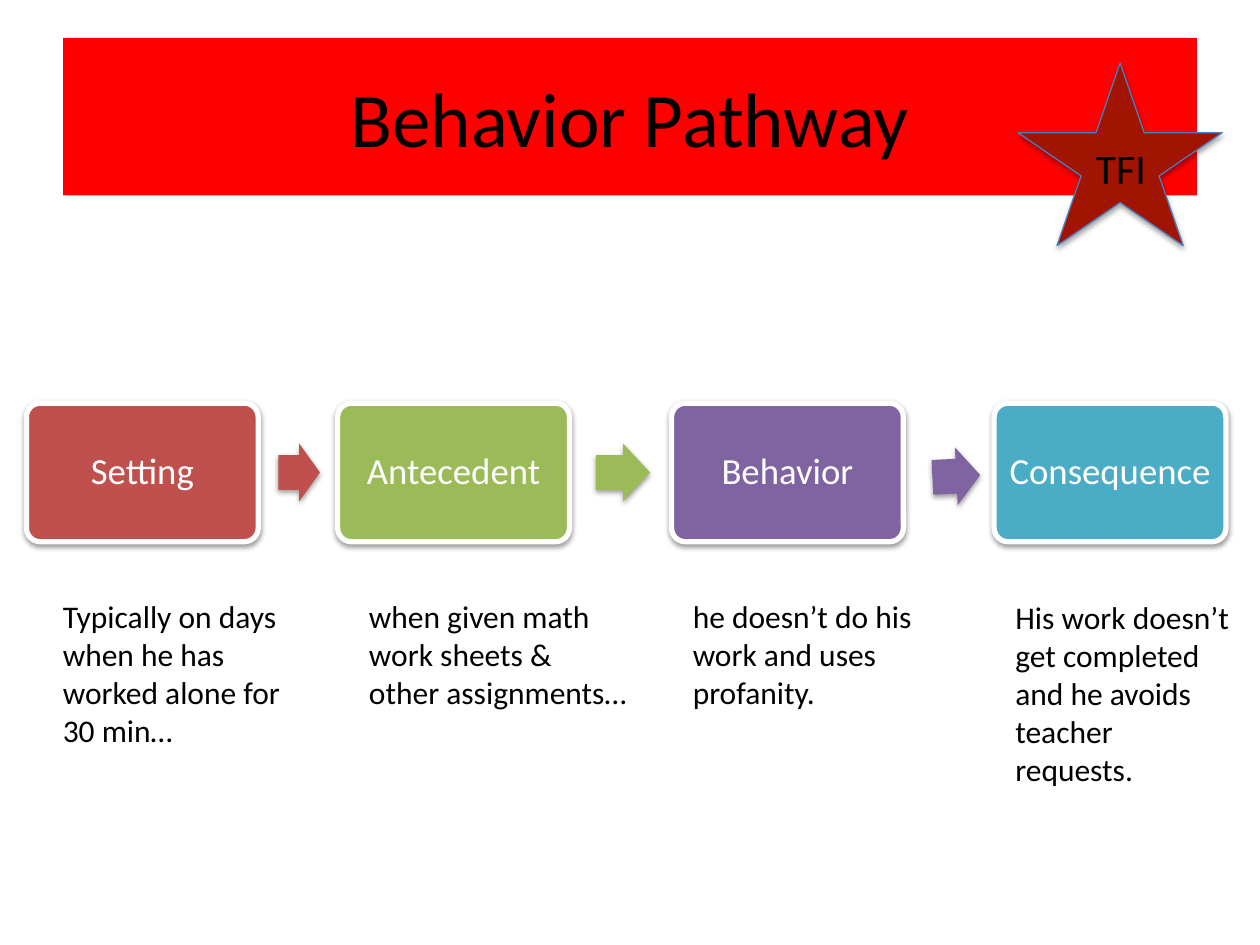
from lxml import etree
from pptx import Presentation
from pptx import util as u
from pptx.dml.color import RGBColor
from pptx.enum import shapes, text
from pptx.oxml.ns import qn

SHAPES = shapes.MSO_SHAPE
CENTER, LEFT = text.PP_ALIGN.CENTER, text.PP_ALIGN.LEFT
MIDDLE, TOP = text.MSO_ANCHOR.MIDDLE, text.MSO_ANCHOR.TOP
WIDTH, HEIGHT = 10, 7.5
CARD_TOP, CARD_WIDTH, CARD_HEIGHT = 3.2, 1.84, 1.1
STAGES = [
    ("Setting", "C0504D", 0.21, (0.4, 4.69, 2.08, 1.31),
     "Typically on days when he has worked alone for 30 min…"),
    ("Antecedent", "9BBB59", 2.68, (2.83, 4.69, 2.25, 1.01),
     "when given math work sheets & other assignments…"),
    ("Behavior", "8064A2", 5.33, (5.4, 4.69, 1.94, 1.01),
     "he doesn’t do his work and uses profanity."),
    ("Consequence", "4BACC6", 7.89, (7.96, 4.7, 1.92, 1.62),
     "His work doesn’t get completed and he avoids teacher requests."),
]
ARROWS = [(2.21, 3.52, 0.33, 0), (4.73, 3.52, 0.43, 0), (7.4, 3.55, 0.38, 357.2)]


def color(value):
    """Turn a hex string into a colour."""
    return RGBColor.from_string(value)


def inches(box):
    """Turn a box of inches into lengths."""
    return [u.Inches(value) for value in box]


def set_all(target, values):
    """Set each attribute named in a dict."""
    for name, value in values.items():
        setattr(target, name, value)


def write(shape, words, size, ink="000000", align=CENTER, anchor=MIDDLE, **frame_format):
    """Write one paragraph of text into a shape."""
    frame = shape.text_frame
    set_all(frame, {"word_wrap": True, "vertical_anchor": anchor, **frame_format})
    paragraph = frame.paragraphs[0]
    paragraph.text = words
    paragraph.alignment = align
    set_all(paragraph.font, {"size": u.Pt(size), "name": "Calibri"})
    paragraph.font.color.rgb = color(ink)


def add_text(slide, box, words, size, align):
    """Add a wrapping text box anchored at its top."""
    write(slide.shapes.add_textbox(*inches(box)), words, size, align=align, anchor=TOP)


def add_shadow(shape, opacity, distance):
    """Give a shape a soft shadow straight below it."""
    shape.shadow.inherit = False
    effects = shape._element.spPr.find(qn("a:effectLst"))
    shadow = etree.SubElement(effects, qn("a:outerShdw"), blurRad=str(u.Pt(3.1)),
                              dist=str(u.Pt(distance)), dir="5400000", rotWithShape="0")
    black = etree.SubElement(shadow, qn("a:srgbClr"), val="000000")
    etree.SubElement(black, qn("a:alpha"), val=str(opacity * 1000))


def add_figure(slide, kind, box, fill, line=None, adjustments=(), opacity=38, distance=1.6):
    """Add a filled preset shape with a shadow."""
    shape = slide.shapes.add_shape(kind, *inches(box))
    for index, value in enumerate(adjustments):
        shape.adjustments[index] = value
    shape.fill.solid()
    shape.fill.fore_color.rgb = color(fill)
    if line:
        shape.line.color.rgb = color(line[0])
        shape.line.width = u.Pt(line[1])
    else:
        shape.line.fill.background()
    add_shadow(shape, opacity, distance)
    return shape


def add_title(slide):
    """Format the title placeholder as a red banner."""
    title = slide.shapes.title
    places = inches((WIDTH * 0.05, HEIGHT * 0.04, WIDTH * 0.9, 1.25))
    set_all(title, dict(zip(("left", "top", "width", "height"), places)))
    title.fill.solid()
    title.fill.fore_color.rgb = color("FF0000")
    write(title, "Behavior Pathway", 44)


def add_card(slide, name, fill, left):
    """Add the rounded card of one stage."""
    card = add_figure(slide, SHAPES.ROUNDED_RECTANGLE,
                      (left, CARD_TOP, CARD_WIDTH, CARD_HEIGHT), fill, ("FFFFFF", 3), [0.1])
    margin = u.Inches(0.05)
    write(card, name, 21, "FFFFFF", margin_left=margin, margin_right=margin)
    card.text_frame.paragraphs[0].line_spacing = 0.9


def add_arrow(slide, fill, left, top, width, rotation):
    """Add an arrow to the next stage."""
    arrow = add_figure(slide, SHAPES.RIGHT_ARROW, (left, top, width, 0.46), fill,
                       adjustments=[0.6, 0.5])
    arrow.rotation = rotation


def add_star(slide):
    """Add the star and its label."""
    add_figure(slide, SHAPES.STAR_5_POINT, (8.08, 0.5, 1.62, 1.45), "A11402",
               ("4B7EBC", 0.75), opacity=35, distance=1.8)
    add_text(slide, (8.54, 1.08, 0.71, 0.29), "TFI", 24, CENTER)


def main():
    """Build and save the slide."""
    presentation = Presentation()
    set_all(presentation, {"slide_width": u.Inches(WIDTH), "slide_height": u.Inches(HEIGHT)})
    slide = presentation.slides.add_slide(presentation.slide_layouts[5])
    add_title(slide)
    for name, fill, left, _, _ in STAGES:
        add_card(slide, name, fill, left)
    for stage, arrow in zip(STAGES, ARROWS):
        add_arrow(slide, stage[1], *arrow)
    for _, _, _, box, words in STAGES:
        add_text(slide, box, words, 18, LEFT)
    add_star(slide)
    presentation.save("out.pptx")


if __name__ == "__main__":
    main()
